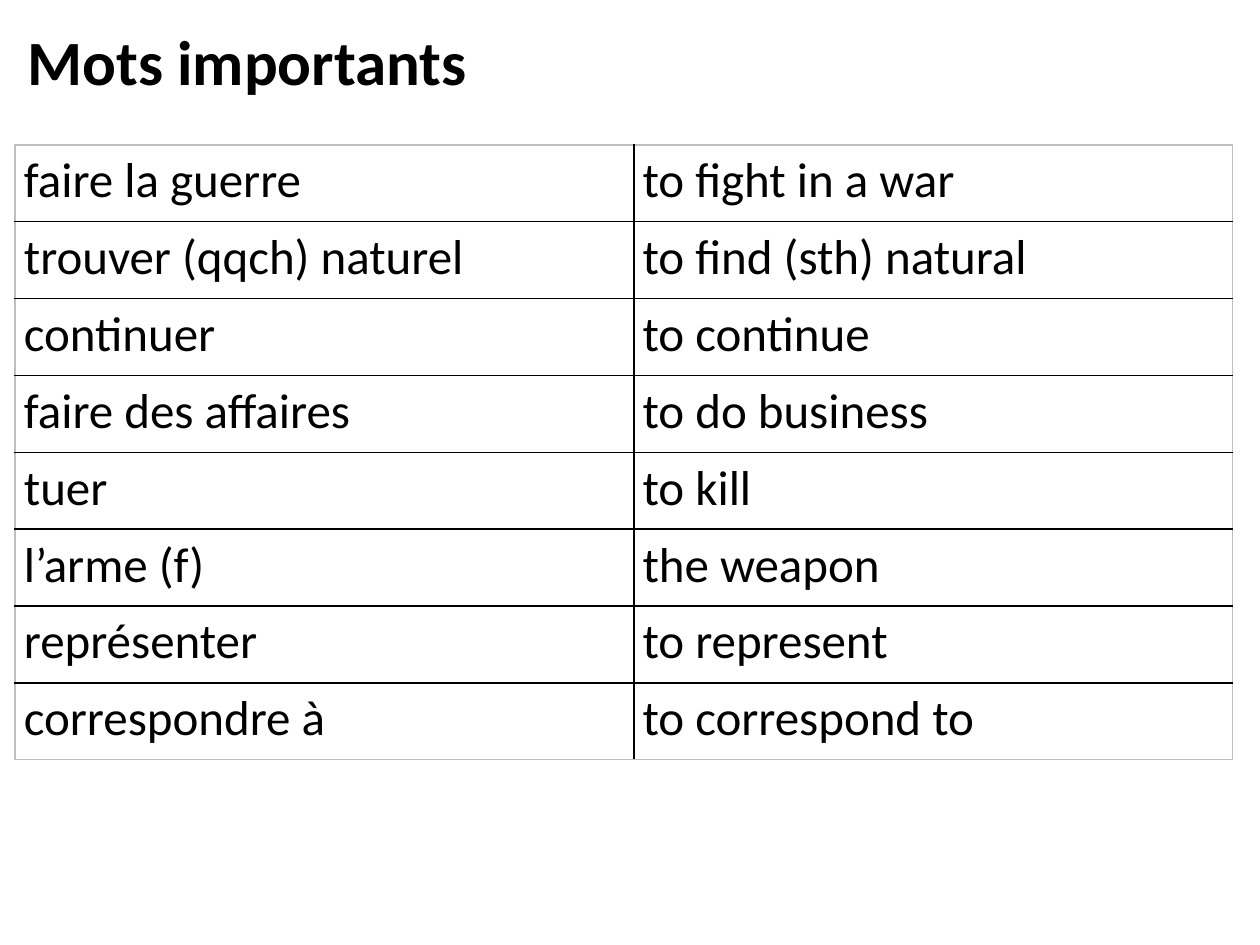
from typing import NamedTuple

from lxml import etree
from pptx import Presentation
from pptx.dml.color import RGBColor
from pptx.enum.text import MSO_ANCHOR, MSO_AUTO_SIZE
from pptx.oxml.ns import qn
from pptx.util import Inches, Pt

ANCHOR_TOP = MSO_ANCHOR.TOP
FIT_SHAPE = MSO_AUTO_SIZE.SHAPE_TO_FIT_TEXT

SLIDE_WIDTH, SLIDE_HEIGHT = 10, 7.5
LEFT = 0.12
TABLE_TOP = 1.15
COLUMN_WIDTHS = (4.91, 4.75)
ROW_HEIGHT = 0.61
COLORS = {"text": "000000", "inner": "000000", "outer": "BFBFBF"}
TITLE_FORMAT = {"name": "Calibri", "size": Pt(36), "bold": True}
CELL_FORMAT = {"name": "Calibri", "size": Pt(28), "bold": False}
CELL_LAYOUT = {
    "margin_left": Inches(0.07),
    "margin_right": Inches(0.07),
    "margin_top": Inches(0.05),
    "margin_bottom": Inches(0.05),
    "vertical_anchor": ANCHOR_TOP,
}


class Word(NamedTuple):
    french: str
    english: str


WORDS = (
    Word("faire la guerre", "to fight in a war"),
    Word("trouver (qqch) naturel", "to find (sth) natural"),
    Word("continuer", "to continue"),
    Word("faire des affaires", "to do business"),
    Word("tuer", "to kill"),
    Word("l’arme (f)", "the weapon"),
    Word("représenter", "to represent"),
    Word("correspondre à", "to correspond to"),
)


def write_text(text_frame, text: str, font_format: dict) -> None:
    run = text_frame.paragraphs[0].add_run()
    run.text = text
    for attribute, value in font_format.items():
        setattr(run.font, attribute, value)
    run.font.color.rgb = RGBColor.from_string(COLORS["text"])


def add_border(cell, side: str, color: str) -> None:
    properties = cell._tc.get_or_add_tcPr()
    line = etree.SubElement(properties, qn(f"a:ln{side}"), w=str(Pt(1)))
    fill = etree.SubElement(line, qn("a:solidFill"))
    etree.SubElement(fill, qn("a:srgbClr"), val=color)


def format_cell(cell, row: int, column: int) -> None:
    """Set margins, borders (grey on the table's edge, black inside) and no fill."""
    for attribute, value in CELL_LAYOUT.items():
        setattr(cell, attribute, value)
    on_edge = {
        "L": column == 0,
        "R": column == len(COLUMN_WIDTHS) - 1,
        "T": row == 0,
        "B": row == len(WORDS) - 1,
    }
    for side, is_outer in on_edge.items():
        add_border(cell, side, COLORS["outer" if is_outer else "inner"])
    cell.fill.background()


def add_title(slide, text: str) -> None:
    title = slide.shapes.add_textbox(
        Inches(LEFT), Inches(0.13), Inches(3.73), Inches(0.71)
    )
    title.text_frame.word_wrap = False
    title.text_frame.auto_size = FIT_SHAPE
    write_text(title.text_frame, text, TITLE_FORMAT)


def add_word_table(slide) -> None:
    table = slide.shapes.add_table(
        len(WORDS), len(COLUMN_WIDTHS), Inches(LEFT), Inches(TABLE_TOP),
        Inches(sum(COLUMN_WIDTHS)), Inches(ROW_HEIGHT * len(WORDS)),
    ).table
    table.first_row = table.horz_banding = False
    for column, width in zip(table.columns, COLUMN_WIDTHS):
        column.width = Inches(width)
    for row, word in enumerate(WORDS):
        table.rows[row].height = Inches(ROW_HEIGHT)
        for column, text in enumerate(word):
            cell = table.cell(row, column)
            format_cell(cell, row, column)
            write_text(cell.text_frame, text, CELL_FORMAT)


def main() -> None:
    presentation = Presentation()
    presentation.slide_width = Inches(SLIDE_WIDTH)
    presentation.slide_height = Inches(SLIDE_HEIGHT)
    slide = presentation.slides.add_slide(presentation.slide_layouts[6])
    add_word_table(slide)
    add_title(slide, "Mots importants")
    presentation.save("out.pptx")


if __name__ == "__main__":
    main()
